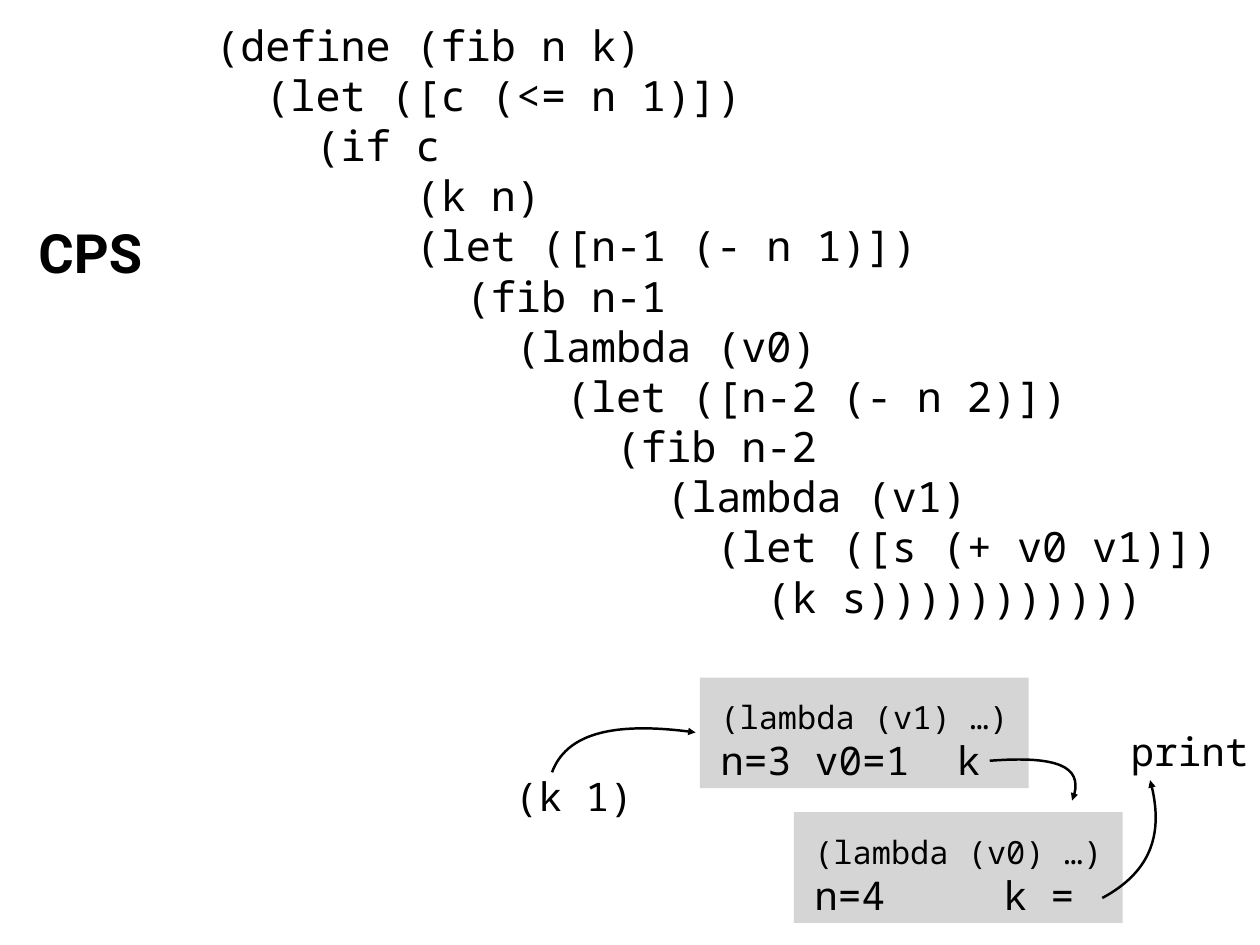
from pptx import Presentation
from pptx.dml.color import RGBColor
from pptx.enum.shapes import MSO_SHAPE
from pptx.enum.text import MSO_ANCHOR, MSO_AUTO_SIZE, PP_ALIGN
from pptx.oxml.ns import qn
from pptx.util import Inches, Pt
from lxml.etree import SubElement

BLACK = RGBColor(0x00, 0x00, 0x00)
FRAME_GRAY = RGBColor(0xD6, 0xD5, 0xD5)
CODE_FONT = "Noto Sans Mono"
TITLE_FONT = "Roboto"
CURVE_STEPS = 24

FIB_CODE = """(define (fib n k)
  (let ([c (<= n 1)])
    (if c
        (k n)
        (let ([n-1 (- n 1)])
          (fib n-1
            (lambda (v0)
              (let ([n-2 (- n 2)])
                (fib n-2
                  (lambda (v1)
                    (let ([s (+ v0 v1)])
                      (k s)))))))))))"""


def format_frame(frame, anchor, wrap):
    frame.margin_left = frame.margin_right = Inches(0.06)
    frame.margin_top = frame.margin_bottom = Inches(0.06)
    frame.vertical_anchor = anchor
    frame.word_wrap = wrap
    frame.auto_size = MSO_AUTO_SIZE.SHAPE_TO_FIT_TEXT


def set_font(para, name, size, bold=False):
    para.font.name = name
    para.font.size = Pt(size)
    para.font.bold = bold
    para.font.color.rgb = BLACK


def add_title(page, text, left, top, width, height):
    title = page.shapes.title
    title.left, title.top = Inches(left), Inches(top)
    title.width, title.height = Inches(width), Inches(height)
    title.text_frame.text = text
    format_frame(title.text_frame, MSO_ANCHOR.MIDDLE, False)
    para = title.text_frame.paragraphs[0]
    para.alignment = PP_ALIGN.CENTER
    set_font(para, TITLE_FONT, 44, True)


def add_code(page, lines, sizes, left, top, width, height,
             anchor=MSO_ANCHOR.TOP, wrap=False):
    box = page.shapes.add_textbox(
        Inches(left), Inches(top), Inches(width), Inches(height))
    frame = box.text_frame
    format_frame(frame, anchor, wrap)
    frame.text = "\n".join(lines)
    for para, size in zip(frame.paragraphs, sizes):
        set_font(para, CODE_FONT, size)


def add_label(page, text, left, top):
    add_code(page, [text], [32], left, top, 1.46, 0.61, MSO_ANCHOR.MIDDLE)


def add_closure(page, head, bindings, left, top):
    card = page.shapes.add_shape(
        MSO_SHAPE.RECTANGLE, Inches(left), Inches(top), Inches(3.71), Inches(1.25))
    card.shadow.inherit = False
    card.fill.solid()
    card.fill.fore_color.rgb = FRAME_GRAY
    card.line.fill.background()
    add_code(page, [head, bindings], [26, 32], left + 0.17, top + 0.17, 3.59, 1.03)


def curve_point(controls, t):
    weights = ((1 - t) ** 3, 3 * t * (1 - t) ** 2, 3 * t ** 2 * (1 - t), t ** 3)
    return tuple(
        Inches(sum(weight * point[axis] for weight, point in zip(weights, controls)))
        for axis in (0, 1))


def add_curved_arrow(page, *controls):
    points = [curve_point(controls, step / CURVE_STEPS)
              for step in range(CURVE_STEPS + 1)]
    builder = page.shapes.build_freeform(*points[0])
    builder.add_line_segments(points[1:], close=False)
    arrow = builder.convert_to_shape()
    arrow.shadow.inherit = False
    arrow.fill.background()
    arrow.line.color.rgb = BLACK
    arrow.line.width = Pt(2)

    outline = next(arrow.element.iter(qn("a:path")))
    for segment in outline.findall(qn("a:lnTo")):
        outline.remove(segment)
    bezier = SubElement(outline, qn("a:cubicBezTo"))
    for x, y in controls[1:]:
        SubElement(bezier, qn("a:pt"), x=str(Inches(x) - arrow.left),
                   y=str(Inches(y) - arrow.top))
    line = arrow.element.spPr.find(qn("a:ln"))
    SubElement(line, qn("a:tailEnd"), type="triangle")


def main():
    deck = Presentation()
    deck.slide_width, deck.slide_height = Inches(14.22), Inches(10.67)
    page = deck.slides.add_slide(deck.slide_layouts[5])

    code_lines = FIB_CODE.splitlines()
    add_code(page, code_lines, [34] * len(code_lines), 2.37, 0.16, 11.58, 6.44,
             wrap=True)
    add_title(page, "CPS", 0.33, 2.42, 1.38, 0.84)

    add_label(page, "(k 1)", 5.75, 8.68)
    add_closure(page, "(lambda (v1) …)", "n=3 v0=1  k", 7.9, 7.65)
    add_label(page, "print", 12.7, 8.17)
    add_closure(page, "(lambda (v0) …)", "n=4     k =", 8.96, 9.17)

    add_curved_arrow(page, (6.23, 8.72), (6.39, 8.29), (6.93, 8.14), (7.85, 8.27))
    add_curved_arrow(page, (11.17, 8.59), (11.94, 8.53), (12.25, 8.68), (12.1, 9.04))
    add_curved_arrow(page, (12.44, 10.14), (12.96, 9.86), (13.15, 9.42), (12.98, 8.81))

    deck.save("out.pptx")


if __name__ == "__main__":
    main()
